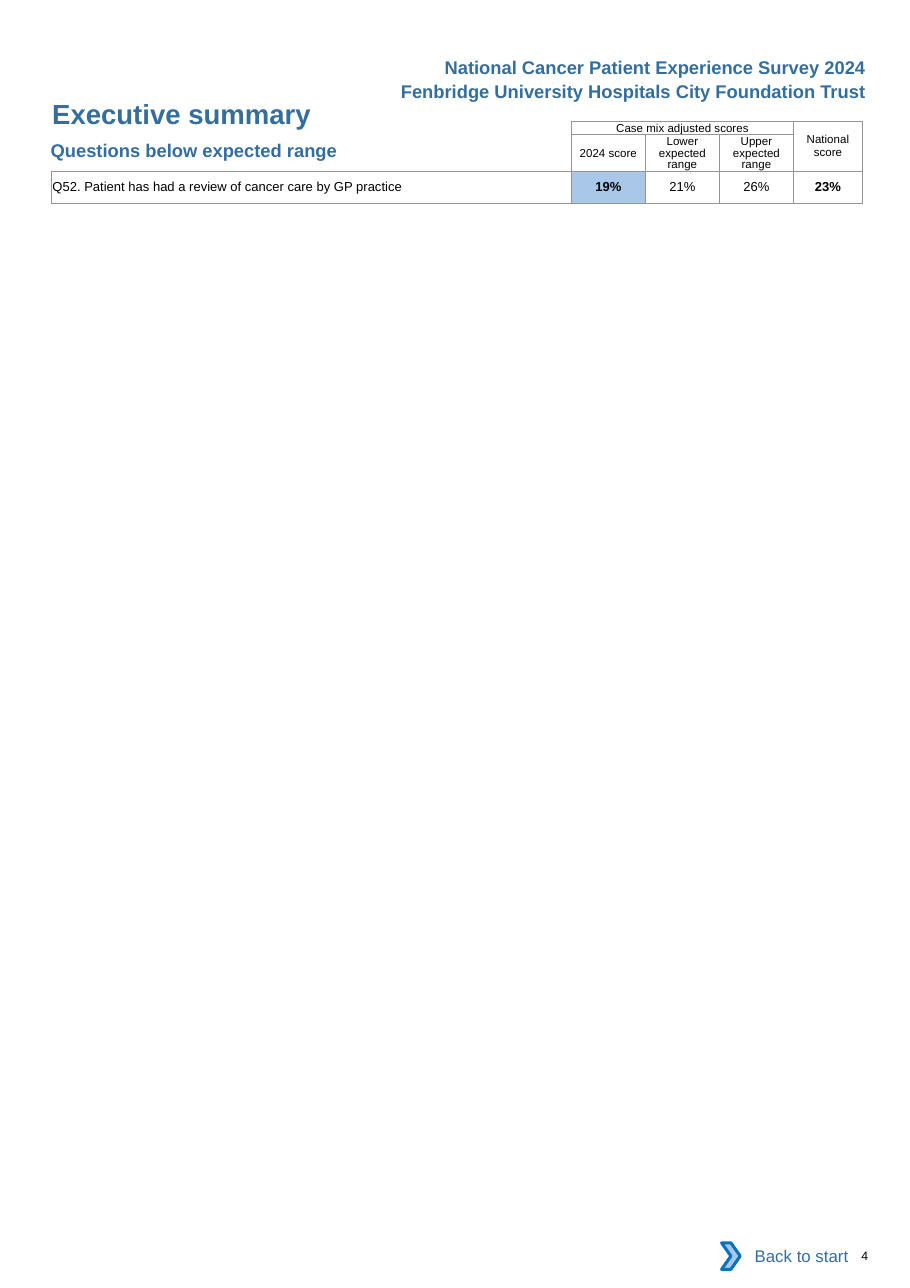
from lxml.etree import SubElement
from pptx import Presentation
from pptx.dml.color import RGBColor
from pptx.enum.shapes import MSO_SHAPE
from pptx.enum.text import MSO_ANCHOR, PP_ALIGN
from pptx.oxml.ns import qn
from pptx.util import Pt

LEFT, CENTER, RIGHT = PP_ALIGN.LEFT, PP_ALIGN.CENTER, PP_ALIGN.RIGHT
TOP, MIDDLE = MSO_ANCHOR.TOP, MSO_ANCHOR.MIDDLE


def color(hex_code):
    return RGBColor.from_string(hex_code)


class ReportPage:
    font = "Arial"
    heading = "336E9F"
    body = "000000"
    rule = "939598"
    highlight = "A8C7E9"
    accent = "0A74BB"

    def __init__(self, slide):
        self.slide = slide

    def label(self, frame, text, size, hex_code, bold=False, align=LEFT, line=None, before=0):
        frame.text = text
        paragraph = frame.paragraphs[0]
        paragraph.alignment = align
        paragraph.space_before = Pt(before)
        if line:
            paragraph.line_spacing = Pt(line)
        for run in paragraph.runs:
            run.font.name = self.font
            run.font.size = Pt(size)
            run.font.bold = bold
            run.font.color.rgb = color(hex_code)

    def frame(self, shape, inset=(0, 0, 0, 0), anchor=TOP):
        frame = shape.text_frame
        frame.word_wrap = True
        frame.vertical_anchor = anchor
        frame.margin_left, frame.margin_top, frame.margin_right, frame.margin_bottom = map(Pt, inset)
        return frame

    def title(self, box, text, size):
        title = self.slide.shapes.title
        title.left, title.top, title.width, title.height = map(Pt, box)
        self.label(self.frame(title, (1, 0, 0, 0)), text, size, self.heading, bold=True, before=1)

    def text(self, box, text, size, hex_code, inset=(0, 0, 0, 0), **style):
        shape = self.slide.shapes.add_textbox(*map(Pt, box))
        self.label(self.frame(shape, inset), text, size, hex_code, **style)

    def shape(self, kind, box, fill, outline=None, weight=0):
        shape = self.slide.shapes.add_shape(kind, *map(Pt, box))
        shape.shadow.inherit = False
        shape.fill.solid()
        shape.fill.fore_color.rgb = color(fill)
        if outline:
            shape.line.color.rgb = color(outline)
            shape.line.width = Pt(weight)
        else:
            shape.line.fill.background()
        return shape

    def borders(self, cell, sides):
        properties = cell._tc.get_or_add_tcPr()
        for position, side in enumerate("LRTB"):
            line = properties.makeelement(qn(f"a:ln{side}"), {"w": str(Pt(0.5))})
            if side in sides:
                SubElement(SubElement(line, qn("a:solidFill")), qn("a:srgbClr"), val=self.rule)
            else:
                SubElement(line, qn("a:noFill"))
            properties.insert(position, line)

    def table(self, left, top, widths, heights):
        box = (left, top, sum(widths), sum(heights))
        table = self.slide.shapes.add_table(len(heights), len(widths), *map(Pt, box)).table
        table.first_row = table.horz_banding = False
        for column, width in zip(table.columns, widths):
            column.width = Pt(width)
        for row, height in zip(table.rows, heights):
            row.height = Pt(height)
        for row in range(len(heights)):
            for column in range(len(widths)):
                cell = table.cell(row, column)
                cell.margin_left = cell.margin_right = cell.margin_top = cell.margin_bottom = 0
                cell.vertical_anchor = MIDDLE
                cell.fill.background()
                unlabelled = column == 0 and row < 2
                sides = ("R" if row == 0 else "RB") if unlabelled else "LRTB"
                self.borders(cell, sides)
                SubElement(cell.text_frame.paragraphs[0]._p, qn("a:endParaRPr"), sz="100")
        return table


def main():
    presentation = Presentation()
    presentation.slide_width, presentation.slide_height = Pt(594.72), Pt(841.68)
    page = ReportPage(presentation.slides.add_slide(presentation.slide_layouts[5]))

    page.title((33.1, 63.4, 190, 21.6), "Executive summary", 18)
    page.text((33.1, 90.7, 217, 14.4), "Questions below expected range", 12, page.heading, bold=True)
    page_headings = ["National Cancer Patient Experience Survey 2024",
                     "Fenbridge University Hospitals City Foundation Trust"]
    for index, heading in enumerate(page_headings):
        page.text((243.1, 33.1 + 16 * index, 330, 21.6), heading, 12, page.heading,
                  inset=(7.2, 3.6, 7.2, 3.6), bold=True, align=RIGHT)

    scores = page.table(33.6, 79, [339.8, 48.4, 48.4, 48.4, 45], [9, 24, 21])
    scores.cell(0, 0).merge(scores.cell(1, 0))
    scores.cell(0, 1).merge(scores.cell(0, 3))
    scores.cell(0, 4).merge(scores.cell(1, 4))
    headers = [
        (0, 1, "Case mix adjusted scores", 9),
        (0, 4, "National score", None),
        (1, 1, "2024 score", None),
        (1, 2, "Lower expected range", 7.6),
        (1, 3, "Upper expected range", 7.6),
    ]
    for row, column, header, line in headers:
        page.label(scores.cell(row, column).text_frame, header, 7.5, page.body, align=CENTER, line=line)
    for column in (2, 3):
        range_header = scores.cell(1, column)
        range_header.margin_left = range_header.margin_right = Pt(6)
        range_header.margin_top = Pt(1)

    question = scores.cell(2, 0)
    question.margin_left = Pt(0.7)
    page.label(question.text_frame, "Q52. Patient has had a review of cancer care by GP practice",
               8.5, page.body)
    for column, score in enumerate(["19%", "21%", "26%", "23%"], start=1):
        page.label(scores.cell(2, column).text_frame, score, 8.5, page.body,
                   bold=column in (1, 4), align=CENTER)
    trust_score = scores.cell(2, 1)
    trust_score.fill.solid()
    trust_score.fill.fore_color.rgb = color(page.highlight)

    back_label = page.shape(MSO_SHAPE.RECTANGLE, (476.6, 805.7, 85, 30.2), "FFFFFF")
    page.label(page.frame(back_label, (7.2, 3.6, 7.2, 3.6), MIDDLE), "Back to start", 11,
               page.heading, align=RIGHT)
    page.shape(MSO_SHAPE.CHEVRON, (471.6, 812.2, 12.2, 17.3), page.highlight, page.accent, 2)
    page.text((555.8, 815.8, 36.7, 9.4), "4", 8, page.body, inset=(7.2, 0, 0, 0))

    presentation.save("out.pptx")


if __name__ == "__main__":
    main()
